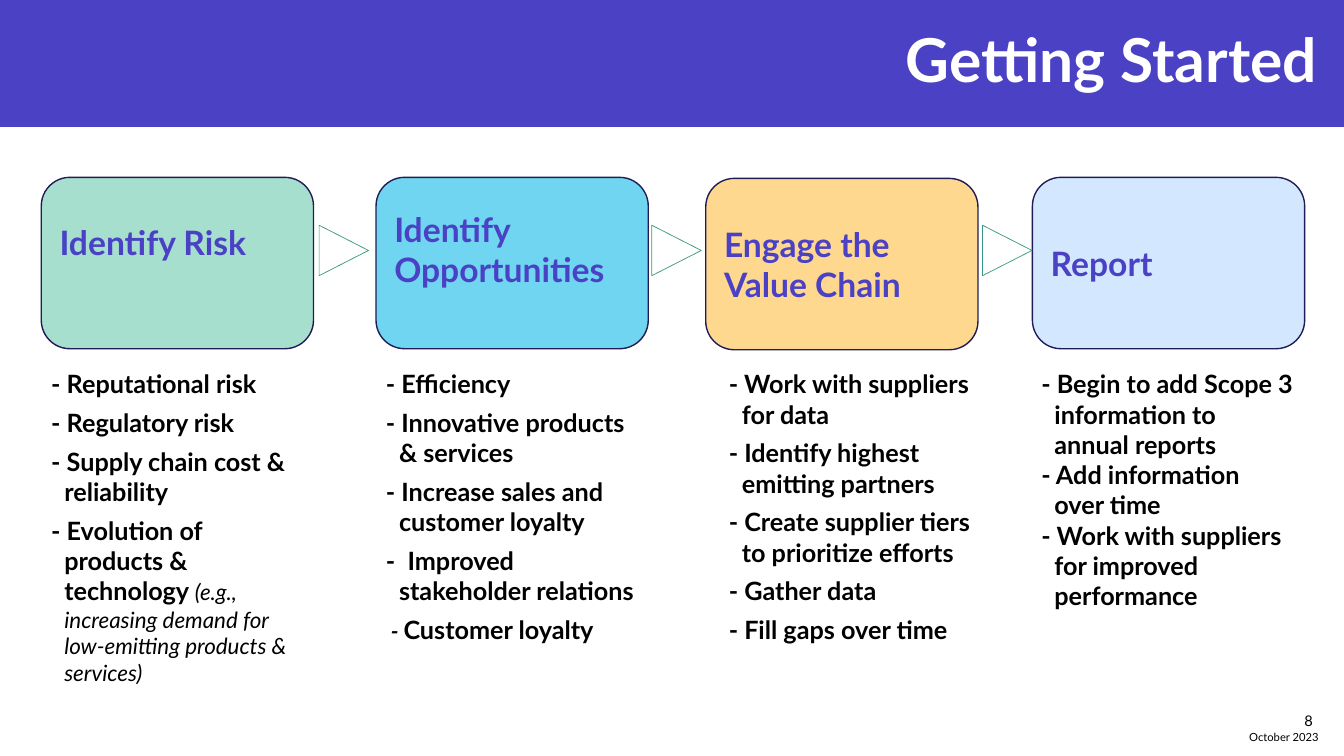
from pptx import Presentation
from pptx.dml.color import RGBColor
from pptx.enum.shapes import MSO_SHAPE
from pptx.enum.text import MSO_ANCHOR, MSO_AUTO_SIZE, PP_ALIGN
from pptx.util import Inches, Pt

RECT, ROUND = MSO_SHAPE.RECTANGLE, MSO_SHAPE.ROUNDED_RECTANGLE
ARROW = MSO_SHAPE.FLOWCHART_EXTRACT
TOP, MIDDLE = MSO_ANCHOR.TOP, MSO_ANCHOR.MIDDLE
LEFT, CENTER, RIGHT = PP_ALIGN.LEFT, PP_ALIGN.CENTER, PP_ALIGN.RIGHT
GROW = MSO_AUTO_SIZE.SHAPE_TO_FIT_TEXT

FONT = "Lato"
BLACK = RGBColor(0, 0, 0)
WHITE = RGBColor(0xFF, 0xFF, 0xFF)
PURPLE = RGBColor(0x4A, 0x41, 0xC5)
NAVY = RGBColor(0x20, 0x1C, 0x56)
GREEN = RGBColor(0x37, 0x99, 0x7B)
MINT = RGBColor(0xA6, 0xDF, 0xCE)
SKY = RGBColor(0x6F, 0xD5, 0xF0)
SAND = RGBColor(0xFF, 0xD8, 0x8F)
PALE = RGBColor(0xD3, 0xE8, 0xFF)

# Content: a point is a string, or a list of (text, format) runs
NOTE = dict(size=16, bold=False, italic=True)
DASH = dict(size=16, italic=True)
STEPS = [
    dict(name="Identify Risk", fill=MINT, left=0.41, top=1.76, lift=0.42,
         list_left=0.41, gap=6, points=[
             "- Reputational risk",
             "- Regulatory risk",
             "- Supply chain cost & reliability",
             [("- Evolution of products & technology ", {}),
              ("(e.g., increasing demand for low-emitting products & services)",
               NOTE)]]),
    dict(name="Identify Opportunities", fill=SKY, left=3.73, top=1.76,
         lift=0.27, list_left=3.73, gap=6, points=[
             "- Efficiency",
             "- Innovative products & services",
             "- Increase sales and customer loyalty",
             "-  Improved stakeholder relations",
             [(" - ", DASH), ("Customer loyalty", {})]]),
    dict(name="Engage the Value Chain", fill=SAND, left=7, top=1.77, lift=0,
         list_left=7.13, gap=6, points=[
             "- Work with suppliers for data",
             "- Identify highest emitting partners",
             "- Create supplier tiers to prioritize efforts",
             "- Gather data",
             "- Fill gaps over time"]),
    dict(name="Report", fill=PALE, left=10.24, top=1.76, lift=0,
         list_left=10.23, gap=0, points=[
             "- Begin to add Scope 3 information to annual reports",
             "- Add information over time",
             "- Work with suppliers for improved performance"]),
]
ARROWS = [3.16, 6.46, 9.74]
CARD_W, CARD_H = 2.7, 1.7
LIST_TOP, LIST_H, HANG = 3.61, 3.5, 0.13

deck = Presentation()
deck.slide_width, deck.slide_height = Inches(13.33), Inches(7.5)
slide = deck.slides.add_slide(deck.slide_layouts[6])


def add_box(kind, left, top, width, height, fill, line=None, weight=1):
    box = slide.shapes.add_shape(kind, Inches(left), Inches(top),
                                 Inches(width), Inches(height))
    box.shadow.inherit = False
    box.fill.solid()
    box.fill.fore_color.rgb = fill
    if line is None:
        box.line.fill.background()
    else:
        box.line.color.rgb = line
        box.line.width = Pt(weight)
    return box


def add_area(left, top, width, height):
    return slide.shapes.add_textbox(Inches(left), Inches(top),
                                    Inches(width), Inches(height))


def write(box, paras, size=18, color=BLACK, bold=False, align=LEFT,
          anchor=TOP, gap=0, hang=0, grow=False):
    frame = box.text_frame
    frame.word_wrap = True
    frame.vertical_anchor = anchor
    if grow:
        frame.auto_size = GROW
    for i, runs in enumerate(paras):
        para = frame.add_paragraph() if i else frame.paragraphs[0]
        para.alignment = align
        if i and gap:
            para.space_before = Pt(gap)
        if hang:
            props = para._p.get_or_add_pPr()
            props.set("marL", str(Inches(hang)))
            props.set("indent", str(-Inches(hang)))
        for text, style in [(runs, {})] if isinstance(runs, str) else runs:
            run = para.add_run()
            run.text = text
            font = run.font
            font.name = FONT
            font.size = Pt(style.get("size", size))
            font.bold = style.get("bold", bold)
            font.italic = style.get("italic", False)
            font.color.rgb = color


# Header
add_box(RECT, 0, 0, 13.33, 1.26, PURPLE)
write(add_area(2.18, 0.15, 10.98, 0.85), ["Getting Started"], size=43.2,
      color=WHITE, bold=True, align=RIGHT, anchor=MIDDLE)

# Cards and their lists
for step in STEPS:
    card = add_box(ROUND, step["left"], step["top"], CARD_W, CARD_H,
                   step["fill"], NAVY)
    card.text_frame.margin_bottom = Inches(0.05 + step["lift"])
    write(card, [step["name"]], size=24, color=PURPLE, bold=True,
          anchor=MIDDLE)
    area = add_area(step["list_left"], LIST_TOP, CARD_W, LIST_H)
    write(area, step["points"], bold=True, gap=step["gap"], hang=HANG,
          grow=True)

# Arrows between cards
for left in ARROWS:
    arrow = add_box(ARROW, left, 2.24, 0.5, 0.49, WHITE, GREEN, 0.5)
    arrow.rotation = 90

# Footer
write(add_area(12.43, 6.95, 0.69, 0.4), ["8"], size=10.5, align=RIGHT,
      anchor=MIDDLE)
write(add_area(12.27, 7.2, 0.93, 0.24), ["October 2023"], size=8,
      align=CENTER, grow=True)

deck.save("out.pptx")
